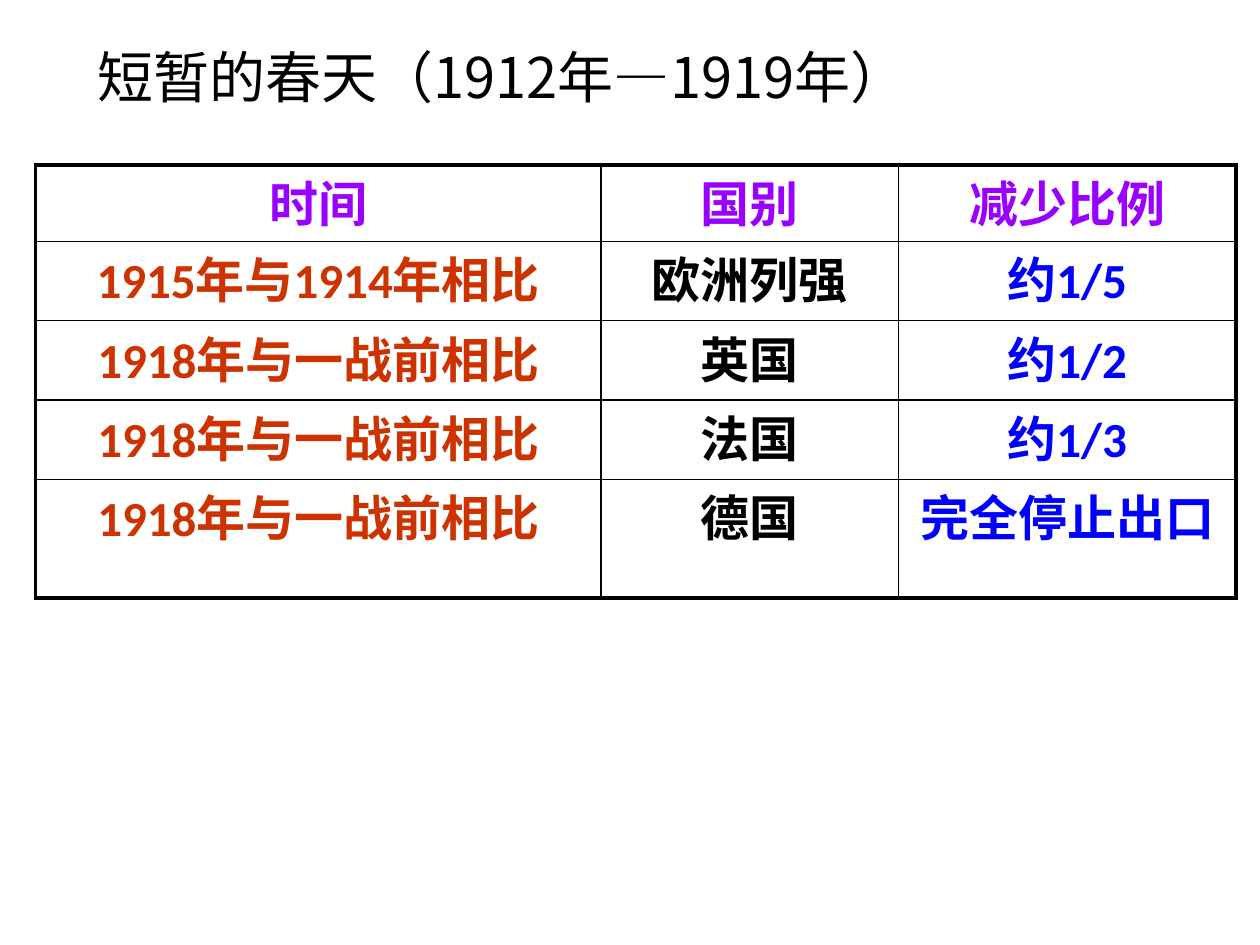
import pptx
import pptx.dml.color
import pptx.enum.text
import pptx.oxml
import pptx.oxml.ns
import pptx.util
from lxml import etree

# Content
TITLE = "短暂的春天（1912年—1919年）"
HEADER = ("时间", "国别", "减少比例")
ROWS = [
    ("1915年与1914年相比", "欧洲列强", "约1/5"),
    ("1918年与一战前相比", "英国", "约1/2"),
    ("1918年与一战前相比", "法国", "约1/3"),
    ("1918年与一战前相比", "德国", "完全停止出口"),
]

# Theme and layout, lengths in inches
THEME = {
    "latin": "Calibri", "asian": "Noto Sans CJK SC",
    "title_size": 32, "table_size": 28,
    "ink": "000000", "header": "9900FF",
    "columns": ("CC3300", "000000", "0000FF"),
    "outer": 2.25, "inner": 1,
}
SLIDE = (10, 7.5)
TITLE_BOX = (0.67, 0.29, 7.17, 0.64)
TABLE_ORIGIN = (0.28, 1.31)
COLUMN_WIDTHS = (4.49, 2.36, 2.68)
ROW_HEIGHTS = (0.55, 0.63, 0.63, 0.63, 0.94)
INCH = pptx.util.Inches
ANCHOR = pptx.enum.text.MSO_ANCHOR
ALIGN = pptx.enum.text.PP_ALIGN


def apply(target, values):
    for name, value in values.items():
        setattr(target, name, value)


def write(para, text, latin, size, color, bold, **layout):
    apply(para, layout)
    span = para.add_run()
    span.text = text
    apply(span.font, {"name": latin, "size": pptx.util.Pt(size), "bold": bold})
    span.font.color.rgb = pptx.dml.color.RGBColor.from_string(color)
    asian = etree.Element(pptx.oxml.ns.qn("a:ea"), typeface=THEME["asian"])
    span.font._element.find(pptx.oxml.ns.qn("a:latin")).addnext(asian)


def draw_borders(cell, widths):
    properties = cell._tc.get_or_add_tcPr()
    for index, (side, width) in enumerate(widths.items()):
        properties.insert(index, pptx.oxml.parse_xml(
            f'<a:ln{side} {pptx.oxml.ns.nsdecls("a")} w="{pptx.util.Pt(width)}">'
            f'<a:solidFill><a:srgbClr val="{THEME["ink"]}"/></a:solidFill></a:ln{side}>'))


deck = pptx.Presentation()
apply(deck, {"slide_width": INCH(SLIDE[0]), "slide_height": INCH(SLIDE[1])})
page = deck.slides.add_slide(deck.slide_layouts.get_by_name("Title Only"))

# Title
box = page.shapes.title
apply(box, dict(zip(("left", "top", "width", "height"), map(INCH, TITLE_BOX))))
apply(box.text_frame, {"word_wrap": True, "vertical_anchor": ANCHOR.TOP,
                       "auto_size": pptx.enum.text.MSO_AUTO_SIZE.NONE})
write(box.text_frame.paragraphs[0], TITLE, THEME["asian"], THEME["title_size"],
      THEME["ink"], False, alignment=ALIGN.LEFT)

# Table grid
cells = [HEADER, *ROWS]
last_row, last_column = len(cells) - 1, len(HEADER) - 1
size = (sum(COLUMN_WIDTHS), sum(ROW_HEIGHTS))
table = page.shapes.add_table(len(cells), len(HEADER),
                              *map(INCH, TABLE_ORIGIN + size)).table
apply(table, {"first_row": False, "horz_banding": False})
for column, width in zip(table.columns, COLUMN_WIDTHS):
    column.width = INCH(width)
for row, height in zip(table.rows, ROW_HEIGHTS):
    row.height = INCH(height)

# Table cells: thick frame outside, thin lines inside
for r, texts in enumerate(cells):
    for c, text in enumerate(texts):
        cell = table.cell(r, c)
        cell.fill.background()
        apply(cell, {"margin_left": INCH(0.07), "margin_right": INCH(0.07),
                     "margin_top": INCH(0.05), "margin_bottom": INCH(0.05),
                     "vertical_anchor": ANCHOR.TOP})
        color = THEME["columns"][c] if r else THEME["header"]
        write(cell.text_frame.paragraphs[0], text, THEME["latin"],
              THEME["table_size"], color, True, alignment=ALIGN.CENTER,
              line_spacing=0.9, space_before=pptx.util.Pt(10))
        edges = {"L": c == 0, "R": c == last_column, "T": r == 0, "B": r == last_row}
        draw_borders(cell, {side: THEME["outer" if edge else "inner"]
                            for side, edge in edges.items()})

deck.save("out.pptx")
